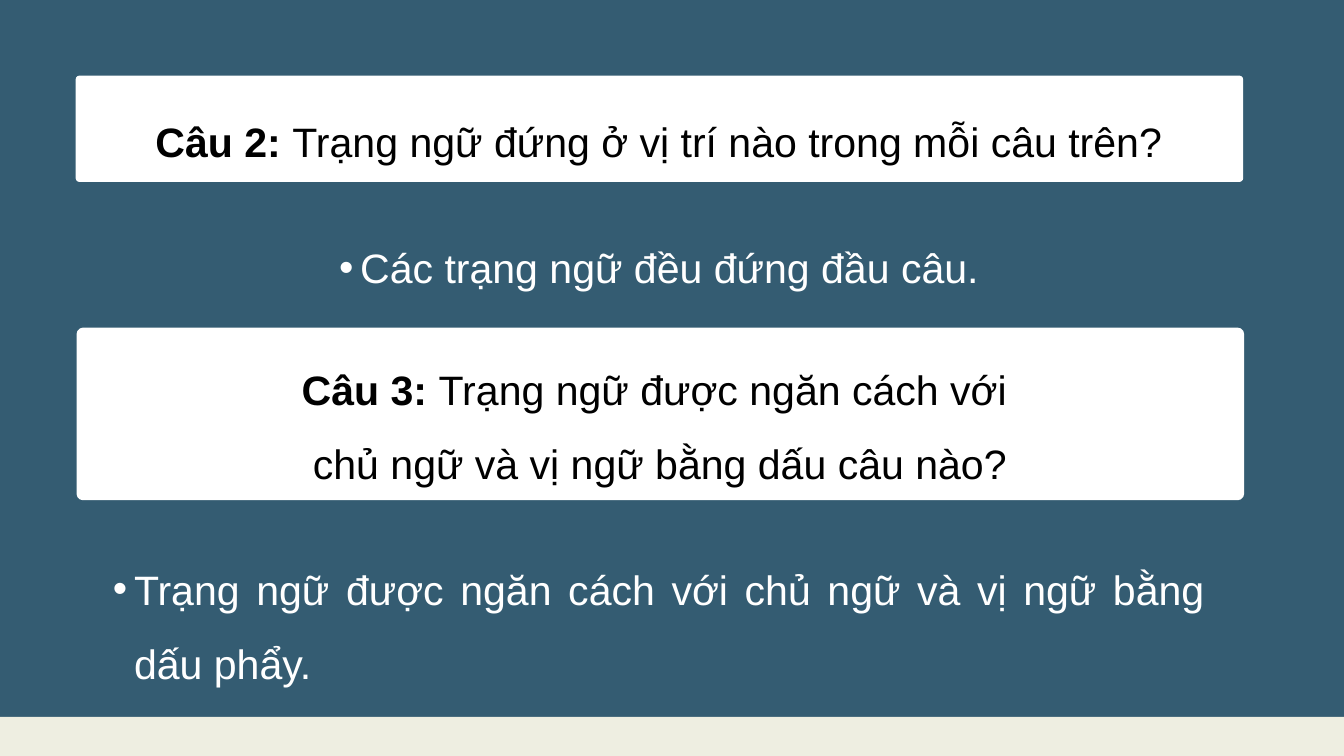
from lxml import etree
from pptx import Presentation
from pptx import util as u
from pptx.dml.color import RGBColor
from pptx.enum import shapes, text
from pptx.oxml.ns import qn

SLATE, CREAM, WHITE, BLACK = "345C72", "EEEEE1", "FFFFFF", "000000"
WIDTH, HEIGHT = 1440, 810


def paint(fill, colour):
    fill.solid()
    fill.fore_color.rgb = RGBColor.from_string(colour)


def add_panel(slide, preset, box, colour):
    panel = slide.shapes.add_shape(preset, *map(u.Pt, box))
    panel.shadow.inherit = False
    paint(panel.fill, colour)
    panel.line.fill.background()
    return panel


def style(paragraph, colour, align, spacing):
    paragraph.alignment = align
    paragraph.line_spacing = spacing
    paragraph.font.name = "Arial"
    paragraph.font.size = u.Pt(44)
    paragraph.font.color.rgb = RGBColor.from_string(colour)


def add_question(slide, box, label, lines):
    card = add_panel(slide, shapes.MSO_SHAPE.ROUNDED_RECTANGLE, box, WHITE)
    card.adjustments[0] = 0.038
    frame = card.text_frame
    frame.word_wrap = True
    frame.vertical_anchor = text.MSO_ANCHOR.MIDDLE
    for number, line in enumerate(lines):
        paragraph = frame.add_paragraph() if number else frame.paragraphs[0]
        style(paragraph, BLACK, text.PP_ALIGN.CENTER, 1.5)
        if number == 0:
            heading = paragraph.add_run()
            heading.text = label
            heading.font.bold = True
        paragraph.add_run().text = line


def add_answer(slide, box, sentence, align, spacing):
    frame = slide.shapes.add_textbox(*map(u.Pt, box)).text_frame
    frame.word_wrap = True
    paragraph = frame.paragraphs[0]
    paragraph.text = sentence
    style(paragraph, WHITE, align, spacing)
    properties = paragraph._p.get_or_add_pPr()
    indent = u.Pt(22.5)
    properties.set("marL", str(indent))
    properties.set("indent", str(-indent))
    bullet_font = etree.Element(qn("a:buFont"), typeface="Arial")
    bullet = etree.Element(qn("a:buChar"), char="•")
    spacing_at = properties.index(properties.find(qn("a:lnSpc")))
    properties.insert(spacing_at + 1, bullet_font)
    properties.insert(spacing_at + 2, bullet)


def main():
    deck = Presentation()
    deck.slide_width, deck.slide_height = u.Pt(WIDTH), u.Pt(HEIGHT)
    slide = deck.slides.add_slide(deck.slide_layouts[6])
    paint(slide.background.fill, SLATE)

    band_top = 768
    add_panel(slide, shapes.MSO_SHAPE.RECTANGLE,
              (0, band_top, WIDTH, HEIGHT - band_top), CREAM)
    add_question(slide, (81, 81, 1251, 114), "Câu 2: ",
                 ["Trạng ngữ đứng ở vị trí nào trong mỗi câu trên?"])
    add_answer(slide, (320.5, 249, 772, 62.5), "Các trạng ngữ đều đứng đầu câu.",
               text.PP_ALIGN.CENTER, 1.14)
    add_question(slide, (82, 351, 1251, 185), "Câu 3: ",
                 ["Trạng ngữ được ngăn cách với ",
                  "chủ ngữ và vị ngữ bằng dấu câu nào?"])
    add_answer(slide, (114, 574.5, 1185, 158),
               "Trạng ngữ được ngăn cách với chủ ngữ và vị ngữ bằng dấu phẩy.",
               text.PP_ALIGN.JUSTIFY, 1.5)
    deck.save("out.pptx")


if __name__ == "__main__":
    main()
